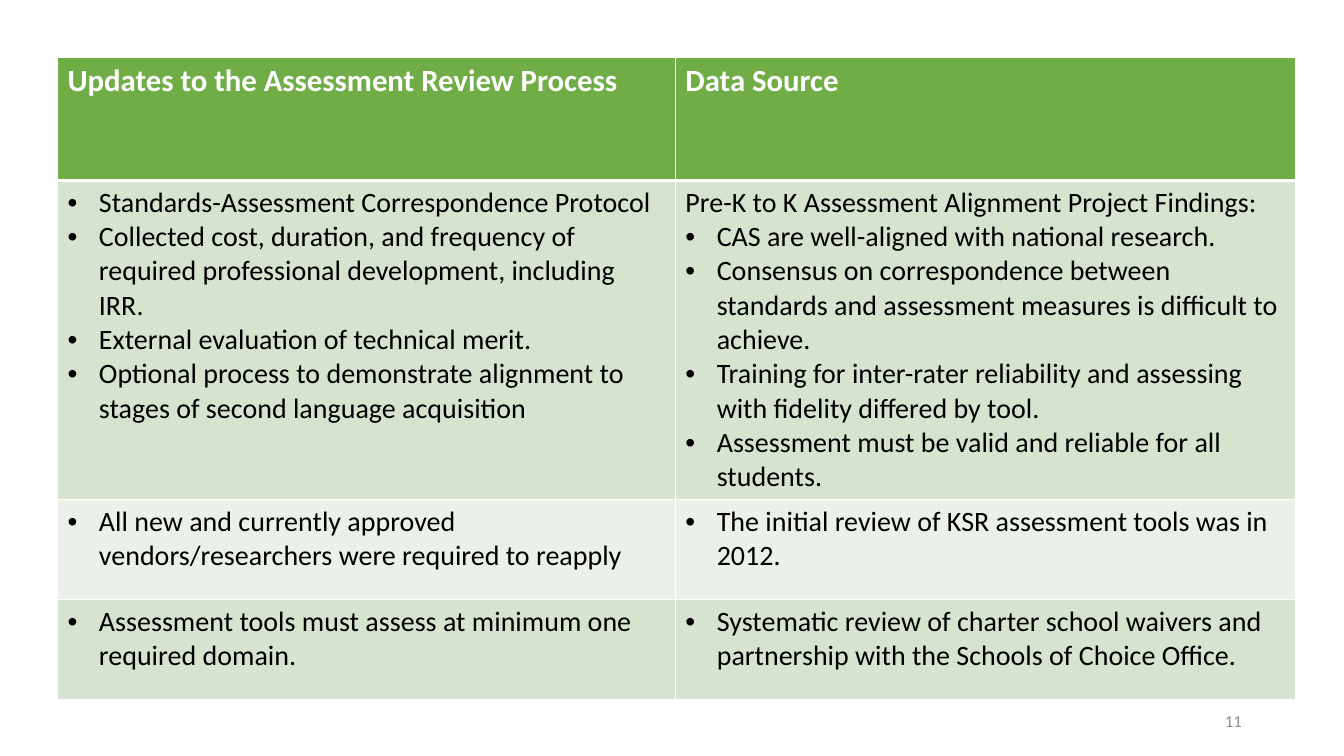
from dataclasses import dataclass

from lxml.etree import SubElement
from pptx import Presentation
from pptx.dml.color import RGBColor
from pptx.enum.text import MSO_ANCHOR as Anchor, PP_ALIGN as Align
from pptx.oxml.ns import qn
from pptx.util import Cm, Pt


@dataclass(frozen=True)
class Theme:
    font: str = "Calibri"
    header_size: int = 22
    body_size: int = 20
    number_size: int = 12
    header_fill: str = "70AD47"
    bands: tuple = ("D5E3CF", "EBF1E9")
    white: str = "FFFFFF"
    black: str = "000000"
    grey: str = "8C8C8C"
    thin: int = 1
    thick: int = 3


THEME = Theme()
INDENT = Cm(0.79)
COLUMN_WIDTHS = (15.57, 15.62)
ROW_HEIGHTS = (3.1, 7.11, 2.52, 2.52)
HEADERS = ("Updates to the Assessment Review Process", "Data Source")
ROWS = (
    (
        (
            "• Standards-Assessment Correspondence Protocol",
            "• Collected cost, duration, and frequency of required professional development, including IRR.",
            "• External evaluation of technical merit.",
            "• Optional process to demonstrate alignment to stages of second language acquisition",
        ),
        (
            "Pre-K to K Assessment Alignment Project Findings:",
            "• CAS are well-aligned with national research.",
            "• Consensus on correspondence between standards and assessment measures is difficult to achieve.",
            "• Training for inter-rater reliability and assessing with fidelity differed by tool.",
            "• Assessment must be valid and reliable for all students.",
        ),
    ),
    (
        ("• All new and currently approved vendors/researchers were required to reapply",),
        ("• The initial review of KSR assessment tools was in 2012.",),
    ),
    (
        ("• Assessment tools must assess at minimum one required domain.",),
        ("• Systematic review of charter school waivers and partnership with the Schools of Choice Office.",),
    ),
)


def add_bullet(para):
    properties = para._p.get_or_add_pPr()
    properties.set("marL", str(INDENT))
    properties.set("indent", str(-INDENT))
    SubElement(properties, qn("a:buFont"), typeface="Arial")
    SubElement(properties, qn("a:buChar"), char="•")


def write(para, text, size, color, bold=False, align=Align.LEFT):
    para.alignment = align
    if text.startswith("• "):
        add_bullet(para)
        text = text[2:]
    span = para.add_run()
    span.text = text
    span.font.name = THEME.font
    span.font.size = Pt(size)
    span.font.bold = bold
    span.font.color.rgb = RGBColor.from_string(color)


def set_borders(cell, top, bottom):
    properties = cell._tc.get_or_add_tcPr()
    widths = {"lnL": THEME.thin, "lnR": THEME.thin, "lnT": top, "lnB": bottom}
    for side, width in widths.items():
        line = SubElement(properties, qn(f"a:{side}"), w=str(Pt(width)))
        fill = SubElement(line, qn("a:solidFill"))
        SubElement(fill, qn("a:srgbClr"), val=THEME.white)


def fill_cell(cell, texts, fill, top=THEME.thin, bottom=THEME.thin, **style):
    set_borders(cell, top, bottom)
    cell.fill.solid()
    cell.fill.fore_color.rgb = RGBColor.from_string(fill)
    frame = cell.text_frame
    for index, text in enumerate(texts):
        para = frame.add_paragraph() if index else frame.paragraphs[0]
        write(para, text, **style)


def add_review_table(page):
    table = page.shapes.add_table(
        len(ROW_HEIGHTS), len(COLUMN_WIDTHS), Cm(1.45), Cm(1.45),
        Cm(sum(COLUMN_WIDTHS)), Cm(sum(ROW_HEIGHTS)),
    ).table
    for column, width in zip(table.columns, COLUMN_WIDTHS):
        column.width = Cm(width)
    for row, height in zip(table.rows, ROW_HEIGHTS):
        row.height = Cm(height)
    for column, header in enumerate(HEADERS):
        fill_cell(table.cell(0, column), (header,), THEME.header_fill, bottom=THEME.thick,
                  size=THEME.header_size, color=THEME.white, bold=True)
    for index, row in enumerate(ROWS):
        for column, texts in enumerate(row):
            fill_cell(table.cell(index + 1, column), texts, THEME.bands[index % 2],
                      top=THEME.thin if index else THEME.thick,
                      size=THEME.body_size, color=THEME.black)


def add_page_number(page, number):
    box = page.shapes.add_textbox(Cm(23.93), Cm(17.65), Cm(7.62), Cm(1.02))
    frame = box.text_frame
    frame.word_wrap = True
    frame.vertical_anchor = Anchor.MIDDLE
    write(frame.paragraphs[0], number, THEME.number_size, THEME.grey, align=Align.RIGHT)
    frame.paragraphs[0].space_after = Pt(6)


def main():
    deck = Presentation()
    deck.slide_width, deck.slide_height = Cm(33.87), Cm(19.05)
    page = deck.slides.add_slide(deck.slide_layouts[6])
    add_review_table(page)
    add_page_number(page, "11")
    deck.save("out.pptx")


if __name__ == "__main__":
    main()
